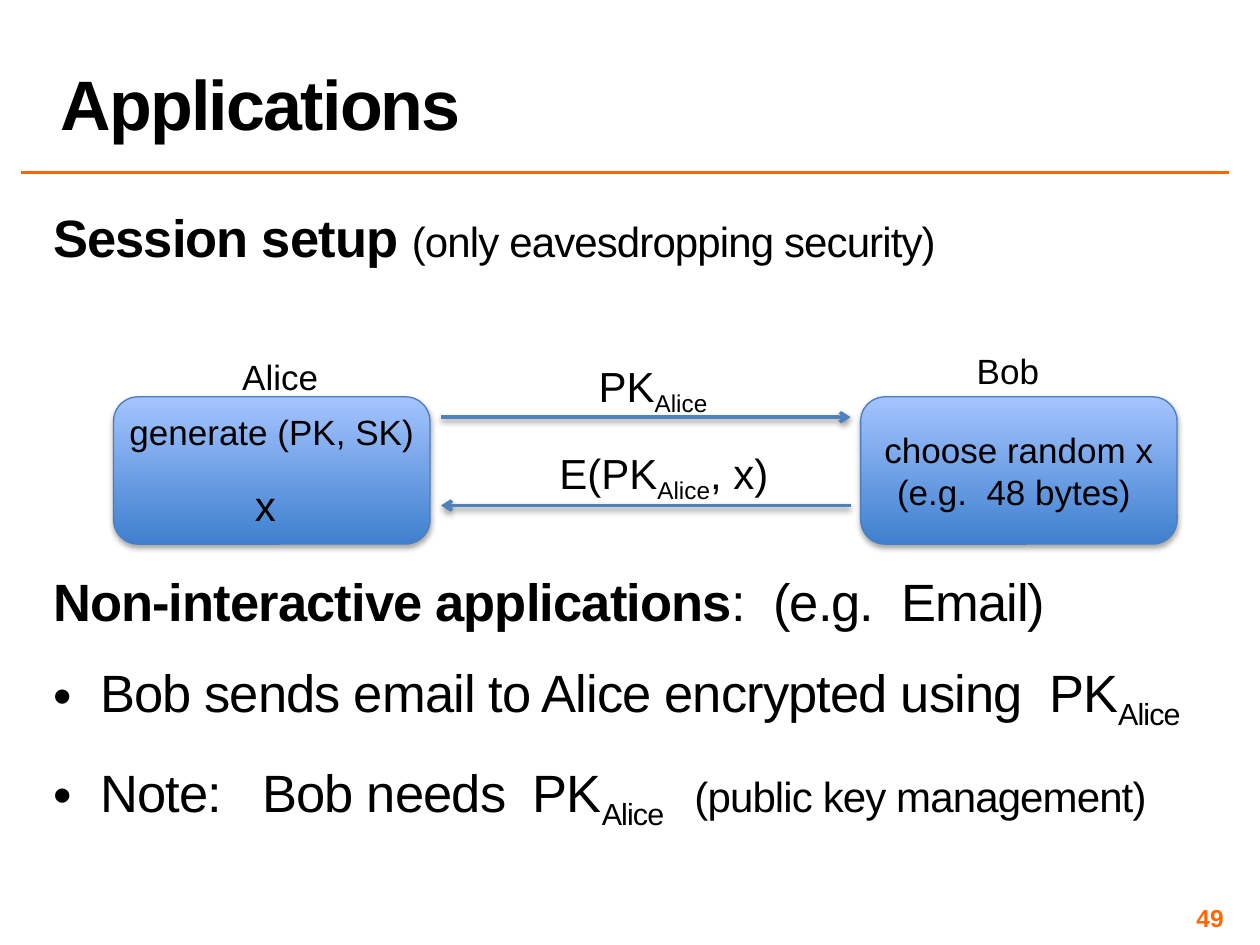
"""Build the slide on applications of public key encryption."""
from dataclasses import dataclass, field

from lxml import etree
from pptx import Presentation
from pptx import util as u
from pptx.dml.color import RGBColor
from pptx.enum import shapes, text
from pptx.oxml import ns

ORANGE = RGBColor(0xFF, 0x66, 0x00)
BLACK = RGBColor(0x00, 0x00, 0x00)
BLUE = RGBColor(0x4F, 0x81, 0xBD)
EDGE = RGBColor(0x4B, 0x7E, 0xBC)
DARK = RGBColor(0x3F, 0x80, 0xCE)
LIGHT = RGBColor(0xA4, 0xC4, 0xFF)

LEFT, MID = text.PP_ALIGN.LEFT, text.PP_ALIGN.CENTER
TOP, MIDDLE = text.MSO_ANCHOR.TOP, text.MSO_ANCHOR.MIDDLE
THIN = {"margin_left": u.Cm(0.1), "margin_right": u.Cm(0.1)}
SNUG = THIN | {"margin_top": u.Cm(0.1), "margin_bottom": u.Cm(0.1)}
LABEL = {"word_wrap": False, "auto_size": text.MSO_AUTO_SIZE.SHAPE_TO_FIT_TEXT}


@dataclass
class Run:
    words: str
    size: float = 20
    bold: bool = False
    sub: bool = False
    color: RGBColor = BLACK
    space: int = 0


@dataclass
class Para:
    runs: list[Run]
    form: dict = field(default_factory=dict)
    bullet: bool = False


@dataclass
class Block:
    place: tuple[float, float, float, float]
    paras: list[Para]
    frame: dict = field(default_factory=dict)
    align: text.PP_ALIGN = MID
    boxed: bool = False


@dataclass
class Line:
    start: float
    end: float
    level: float
    color: RGBColor = BLUE
    arrow: bool = True


def apply(target, form: dict) -> None:
    """Set each attribute named in the format values."""
    for name, value in form.items():
        setattr(target, name, value)


def add_sub(parent, tag: str, **attrs: str):
    """Append a DrawingML element."""
    return etree.SubElement(parent, ns.qn(tag), attrs)


def shade(props, alpha: int) -> None:
    """Append a soft downward shadow."""
    effect = add_sub(props, "a:effectLst")
    shadow = add_sub(effect, "a:outerShdw", blurRad="40000", dist="22000",
                     dir="5400000", rotWithShape="0")
    color = add_sub(shadow, "a:srgbClr", val=str(BLACK))
    add_sub(color, "a:alpha", val=str(alpha * 1000))


def write(frame, paras: list[Para], align: text.PP_ALIGN) -> None:
    """Fill a text frame with formatted paragraphs."""
    for index, para in enumerate(paras):
        item = frame.add_paragraph() if index else frame.paragraphs[0]
        apply(item, {"alignment": align} | para.form)
        if para.bullet:
            props = item._p.get_or_add_pPr()
            indent = u.Cm(0.95)
            props.set("marL", str(indent))
            props.set("indent", str(-indent))
            add_sub(props, "a:buFont", typeface="Arial")
            add_sub(props, "a:buChar", char="•")
        for run in para.runs:
            part = item.add_run()
            part.text = run.words
            apply(part.font, {"name": "Arial", "size": u.Pt(run.size),
                              "bold": run.bold})
            part.font.color.rgb = run.color
            props = part._r.get_or_add_rPr()
            if run.space:
                props.set("spc", str(run.space))
            if run.sub:
                props.set("baseline", "-25000")


def draw_block(slide, block: Block) -> None:
    """Draw a text block, in a shaded box if asked."""
    place = [u.Cm(value) for value in block.place]
    if block.boxed:
        shape = slide.shapes.add_shape(
            shapes.MSO_SHAPE.ROUNDED_RECTANGLE, *place)
        shape.fill.gradient()
        shape.fill.gradient_angle = 90
        for stop, color in zip(shape.fill.gradient_stops, (DARK, LIGHT)):
            stop.color.rgb = color
        shape.line.color.rgb = EDGE
        shape.line.width = u.Pt(0.75)
        shade(shape._element.spPr, 35)
    else:
        shape = slide.shapes.add_textbox(*place)
    apply(shape.text_frame, {"word_wrap": True, "vertical_anchor": TOP}
          | block.frame)
    write(shape.text_frame, block.paras, block.align)


def draw_line(slide, line: Line) -> None:
    """Draw a level line, with a shaded arrow if asked."""
    level = u.Cm(line.level)
    shape = slide.shapes.add_connector(
        shapes.MSO_CONNECTOR.STRAIGHT, u.Cm(line.start), level,
        u.Cm(line.end), level)
    shape.line.color.rgb = line.color
    shape.line.width = u.Pt(2)
    props = shape._element.spPr
    if line.arrow:
        add_sub(shape.line._get_or_add_ln(), "a:tailEnd", type="arrow")
        shade(props, 38)
    else:
        add_sub(props, "a:effectLst")


def big(words: str, **form) -> Run:
    """Make a run in the body style."""
    return Run(words, **({"size": 30, "space": -50} | form))


def label(place: tuple, *runs: Run) -> Block:
    """Make a label that fits its text."""
    return Block(place, [Para(list(runs))], LABEL)


def main() -> None:
    """Build and save the slide."""
    deck = Presentation()
    deck.slide_width, deck.slide_height = u.Cm(25.4), u.Cm(19.05)
    slide = deck.slides.add_slide(deck.slide_layouts[6])

    gap = {"space_before": u.Pt(8), "space_after": u.Pt(8)}
    body = [
        Para([big("Session setup ", bold=True),
              big("(only eavesdropping security)", size=24)], gap),
        Para([big("Non-interactive applications", bold=True),
              big(":  (e.g.  Email)")], gap | {"space_before": u.Pt(164)}),
        Para([big("Bob sends email to Alice encrypted using  PK"),
              big("Alice", sub=True)], gap, True),
        Para([big("Note:   Bob needs  PK"), big("Alice    ", sub=True),
              big("(public key management)", size=24)], gap, True),
    ]
    title = Para([Run("Applications", 40, True, space=-100)],
                 {"line_spacing": 0.8})
    wide, high, top = 6.38, 2.97, 8.0
    near, far = 8.89, 17.15
    alice = Run("Alice", 24, sub=True)
    items = [
        Line(0.43, 24.77, 3.48, ORANGE, False),
        Block((0.97, 0.05, 23.8, 2.97), [title],
              {"vertical_anchor": text.MSO_ANCHOR.BOTTOM}, LEFT),
        Block((0.97, 4.04, 23.8, 13.92), body, SNUG, LEFT),
        Block((2.29, top, wide, high), [Para([Run("generate (PK, SK)")])],
              THIN, boxed=True),
        label((4.62, 7.04, 2.06, 1.12), Run("Alice")),
        Block((17.35, top, wide, high),
              [Para([Run("choose random x")]),
               Para([Run("(e.g.  48 bytes) ")])],
              {"vertical_anchor": MIDDLE}, boxed=True),
        label((19.43, 6.93, 1.78, 1.12), Run("Bob")),
        Line(near, far, 8.41),
        label((11.73, 7.14, 2.87, 1.27), Run("PK", 24), alice),
        Line(far, near, 10.19),
        label((10.92, 8.89, 4.93, 1.27), Run("E(PK", 24), alice,
              Run(", x)", 24)),
        label((4.88, 9.55, 0.94, 1.27), Run("x", 24)),
        Block((18.85, 18.21, 5.92, 0.58),
              [Para([Run("49", 14, True, color=ORANGE)])],
              SNUG | {"vertical_anchor": MIDDLE}, text.PP_ALIGN.RIGHT),
    ]
    for item in items:
        draw = draw_line if isinstance(item, Line) else draw_block
        draw(slide, item)
    deck.save("out.pptx")


if __name__ == "__main__":
    main()
